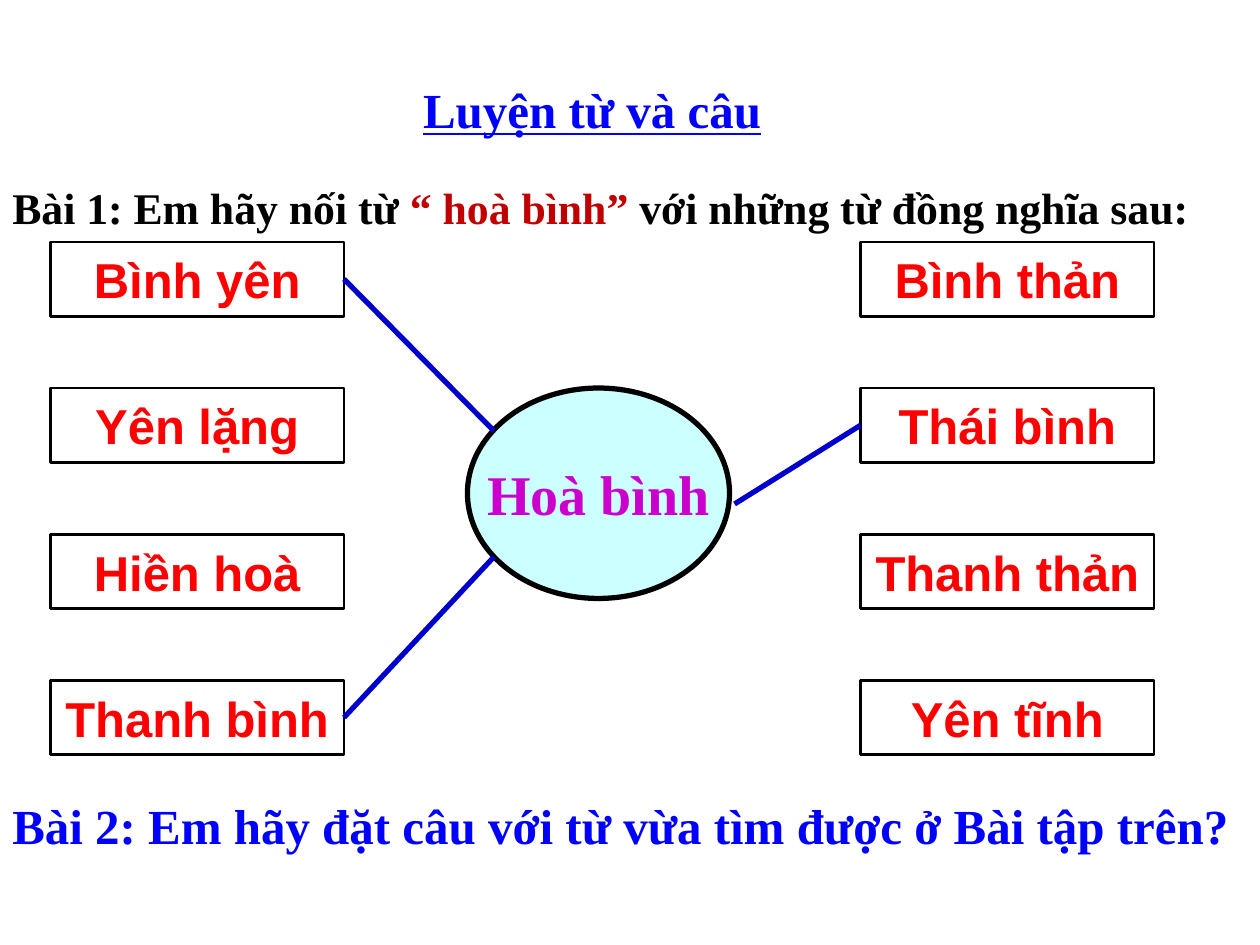
from dataclasses import dataclass

from lxml import etree
from pptx import Presentation
from pptx.dml.color import RGBColor
from pptx.enum import shapes, text
from pptx.oxml.ns import qn
from pptx.util import Inches, Pt


@dataclass(frozen=True)
class Theme:
    serif: str = "Times New Roman"
    sans: str = "Arial"
    black: str = "000000"
    white: str = "FFFFFF"
    blue: str = "0000FF"
    line_blue: str = "0000CC"
    red: str = "FF0000"
    dark_red: str = "C00000"
    purple: str = "CC00CC"
    pale_cyan: str = "CCFFFF"
    task_size: int = 25
    main_size: int = 28
    centre_size: int = 32
    box_line: float = 1.5
    thick_line: float = 3


THEME = Theme()


@dataclass(frozen=True)
class Span:
    words: str
    color: str
    size: int = THEME.main_size
    font: str = THEME.serif
    underline: bool = False


@dataclass(frozen=True)
class Area:
    left: float
    top: float
    width: float
    height: float


@dataclass(frozen=True)
class Match:
    """A line from the side of a word box to a point by the centre word."""
    word: str
    side: int
    x: float
    y: float


LEFT_SIDE, RIGHT_SIDE = 1, 3
FIRST_ROW, ROW_STEP = 1.92, 1.16
BOX_WIDTH, BOX_HEIGHT = 2.33, 0.59
COLUMNS = {
    0.4: ["Bình yên", "Yên lặng", "Hiền hoà", "Thanh bình"],
    6.83: ["Bình thản", "Thái bình", "Thanh thản", "Yên tĩnh"],
}
MATCHES = [
    Match("Bình yên", RIGHT_SIDE, 3.92, 3.42),
    Match("Thanh bình", RIGHT_SIDE, 3.92, 4.42),
    Match("Thái bình", LEFT_SIDE, 5.83, 4),
]


def rgb(color: str) -> RGBColor:
    return RGBColor.from_string(color)


def lengths(area: Area) -> list:
    return [Inches(n) for n in (area.left, area.top, area.width, area.height)]


def write(box, spans: list[Span], align=text.PP_ALIGN.LEFT, wrap: bool = True) -> None:
    frame = box.text_frame
    frame.word_wrap = wrap
    frame.vertical_anchor = text.MSO_ANCHOR.MIDDLE
    para = frame.paragraphs[0]
    para.alignment = align
    for span in spans:
        run = para.add_run()
        run.text = span.words
        font = run.font
        font.name, font.size, font.bold = span.font, Pt(span.size), True
        font.color.rgb = rgb(span.color)
        if span.underline:
            font.underline = True


def add_text(page, area: Area, spans: list[Span]) -> None:
    write(page.shapes.add_textbox(*lengths(area)), spans)


def add_box(page, kind, area: Area, line: str, weight: float, fill: str | None = None):
    box = page.shapes.add_shape(kind, *lengths(area))
    box.shadow.inherit = False
    if fill:
        box.fill.solid()
        box.fill.fore_color.rgb = rgb(fill)
    else:
        box.fill.background()
    box.line.color.rgb = rgb(line)
    box.line.width = Pt(weight)
    return box


def add_words(page) -> dict:
    """Draw both columns of word boxes and return the boxes by word."""
    boxes = {}
    for left, words in COLUMNS.items():
        for row, word in enumerate(words):
            area = Area(left, FIRST_ROW + row * ROW_STEP, BOX_WIDTH, BOX_HEIGHT)
            box = add_box(page, shapes.MSO_SHAPE.RECTANGLE, area, THEME.black, THEME.box_line)
            write(box, [Span(word, THEME.red, font=THEME.sans)], text.PP_ALIGN.CENTER)
            boxes[word] = box
    return boxes


def add_centre(page) -> None:
    oval = add_box(page, shapes.MSO_SHAPE.OVAL, Area(3.71, 3.08, 2.08, 1.67),
                   THEME.black, THEME.thick_line, THEME.pale_cyan)
    write(oval, [Span("Hoà bình", THEME.purple, THEME.centre_size)],
          text.PP_ALIGN.CENTER, wrap=False)


def add_match(page, box, match: Match) -> None:
    x, y = Inches(match.x), Inches(match.y)
    line = page.shapes.add_connector(shapes.MSO_CONNECTOR.STRAIGHT, x, y, x, y)
    line.begin_connect(box, match.side)
    line.line.color.rgb = rgb(THEME.line_blue)
    line.line.width = Pt(THEME.thick_line)
    etree.SubElement(line._element.spPr, qn("a:effectLst"))


def main() -> None:
    deck = Presentation()
    deck.slide_width, deck.slide_height = Inches(10), Inches(7.5)
    page = deck.slides.add_slide(deck.slide_layouts[6])

    add_text(page, Area(3.26, 0.58, 3.83, 0.57),
             [Span("Luyện từ và câu", THEME.blue, underline=True)])
    add_text(page, Area(0, 1.38, 10, 0.52), [
        Span("Bài 1: Em hãy nối từ ", THEME.black, THEME.task_size),
        Span("“ hoà bình” ", THEME.dark_red, THEME.task_size),
        Span("với những từ đồng nghĩa sau:", THEME.black, THEME.task_size),
    ])

    boxes = add_words(page)
    add_centre(page)
    for match in MATCHES:
        add_match(page, boxes[match.word], match)

    question = add_box(page, shapes.MSO_SHAPE.RECTANGLE, Area(0, 6.26, 10, 0.57),
                       THEME.white, 0.75, THEME.white)
    write(question, [Span("Bài 2: Em hãy đặt câu với từ vừa tìm được ở Bài tập trên?",
                          THEME.blue)])
    deck.save("out.pptx")


if __name__ == "__main__":
    main()
